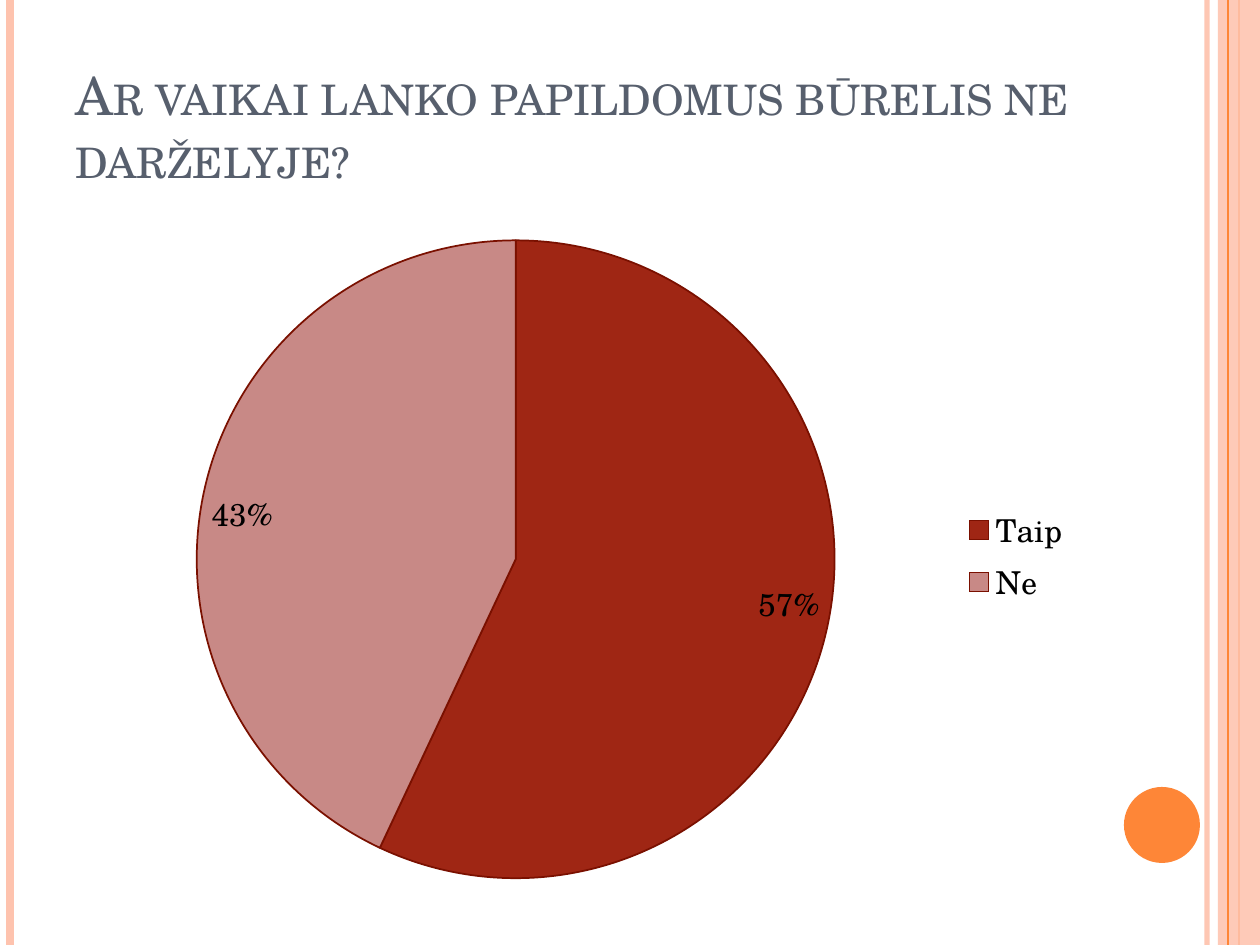
import pptx
import pptx.chart.data
import pptx.dml.color
import pptx.enum.chart
import pptx.enum.shapes
import pptx.enum.text
import pptx.oxml
import pptx.oxml.ns
import pptx.util

FONT = "TeX Gyre Schola"
PINK, ORANGE = "FEC3AE", "FE8637"
W, H = 1260, 945


def px(n):
    """Turn pixels into EMU."""
    return round(n * 914400 / 126)


def rgb(c):
    """Turn a hex string into a colour."""
    return pptx.dml.color.RGBColor.from_string(c)


def set_alpha(fill, percent):
    """Make a solid fill partly transparent."""
    clr = fill._xPr.find(".//" + pptx.oxml.ns.qn("a:srgbClr"))
    pptx.oxml.ns.qn("a:alpha")
    clr.append(pptx.oxml.parse_xml(
        f'<a:alpha {pptx.oxml.ns.nsdecls("a")} val="{percent * 1000}"/>'))


def add_stripe(s, x, width, color, alpha=100):
    """Draw a vertical line down the whole slide."""
    ln = s.shapes.add_connector(
        pptx.enum.shapes.MSO_CONNECTOR.STRAIGHT, px(x), 0, px(x), px(H))
    ln.line.width = pptx.util.Pt(width)
    ln.line.color.rgb = rgb(color)
    if alpha < 100:
        set_alpha(ln.line.fill, alpha)
    ln._element.spPr.append(pptx.oxml.parse_xml(
        f'<a:effectLst {pptx.oxml.ns.nsdecls("a")}/>'))


def add_plain(s, kind, box, color, alpha=100):
    """Draw a filled shape without outline."""
    sp = s.shapes.add_shape(kind, *map(px, box))
    sp.shadow.inherit = False
    sp.fill.solid()
    sp.fill.fore_color.rgb = rgb(color)
    if alpha < 100:
        set_alpha(sp.fill, alpha)
    sp.line.fill.background()


def add_frame(s):
    """Draw the side stripes, the right band and the dot."""
    shape = pptx.enum.shapes.MSO_SHAPE
    add_stripe(s, W - 53, 3, PINK, 93)
    add_stripe(s, 10, 4.5, PINK)
    add_stripe(s, W - 21, 1.5, ORANGE)
    add_plain(s, shape.RECTANGLE, (W - 42, 0, 42, H), PINK, 87)
    add_stripe(s, W - 32, 0.75, ORANGE)
    add_plain(s, shape.OVAL, (1124, 787, 76, 76), ORANGE)


def add_title(s, box, text):
    """Place the title in small capitals."""
    sp = s.shapes.title
    sp.left, sp.top, sp.width, sp.height = map(px, box)
    tf = sp.text_frame
    tf.word_wrap = True
    tf.vertical_anchor = pptx.enum.text.MSO_ANCHOR.BOTTOM
    p = tf.paragraphs[0]
    p.alignment = pptx.enum.text.PP_ALIGN.LEFT
    r = p.add_run()
    r.text = text
    r.font.name = FONT
    r.font.size = pptx.util.Pt(30)
    r.font.color.rgb = rgb("575F6D")
    r.font._element.set("cap", "small")


def set_font(font):
    """Format chart text."""
    font.name = FONT
    font.size = pptx.util.Pt(18)
    font.color.rgb = rgb("000000")


def add_pie(s, box, answers):
    """Place the pie of answers, given as name, value and colour."""
    data = pptx.chart.data.CategoryChartData()
    data.categories = [name for name, _, _ in answers]
    data.add_series("Series 1", [value for _, value, _ in answers])
    chart = s.shapes.add_chart(
        pptx.enum.chart.XL_CHART_TYPE.PIE, *map(px, box), data).chart
    set_font(chart.font)
    chart.has_title = False
    chart.has_legend = True
    chart.legend.position = pptx.enum.chart.XL_LEGEND_POSITION.RIGHT
    chart.legend.include_in_layout = False
    set_font(chart.legend.font)
    plot = chart.plots[0]
    plot.vary_by_categories = True
    for i, (_, _, color) in enumerate(answers):
        fmt = plot.series[0].points[i].format
        fmt.fill.solid()
        fmt.fill.fore_color.rgb = rgb(color)
        fmt.line.color.rgb = rgb("7A1000")
        fmt.line.width = pptx.util.Pt(1)
    plot.has_data_labels = True
    dl = plot.data_labels
    dl.show_percentage = True
    dl.show_value = False
    dl.number_format = "0%"
    dl.number_format_is_linked = False
    dl.position = pptx.enum.chart.XL_LABEL_POSITION.INSIDE_END
    set_font(dl.font)
    area = chart._chartSpace.chart.plotArea
    for old in area.findall(pptx.oxml.ns.qn("c:layout")):
        area.remove(old)
    sizes = {"x": 0.13, "y": 0.03, "w": 0.62, "h": 0.95}
    parts = "".join(f'<c:{k} val="{v}"/>' for k, v in sizes.items())
    area.insert(0, pptx.oxml.parse_xml(
        f'<c:layout {pptx.oxml.ns.nsdecls("c")}><c:manualLayout>'
        '<c:layoutTarget val="inner"/><c:xMode val="edge"/>'
        f'<c:yMode val="edge"/>{parts}</c:manualLayout></c:layout>'))


def main():
    """Build the slide and save it."""
    prs = pptx.Presentation()
    prs.slide_width, prs.slide_height = px(W), px(H)
    s = prs.slides.add_slide(prs.slide_layouts[5])
    add_frame(s)
    add_title(s, (63, 38, 1029, 157),
              "Ar vaikai lanko papildomus būrelis ne darželyje?")
    add_pie(s, (63, 220, 1029, 672),
            [("Taip ", 57, "9F2614"), ("Ne", 43, "C88986")])
    prs.save("out.pptx")


if __name__ == "__main__":
    main()
